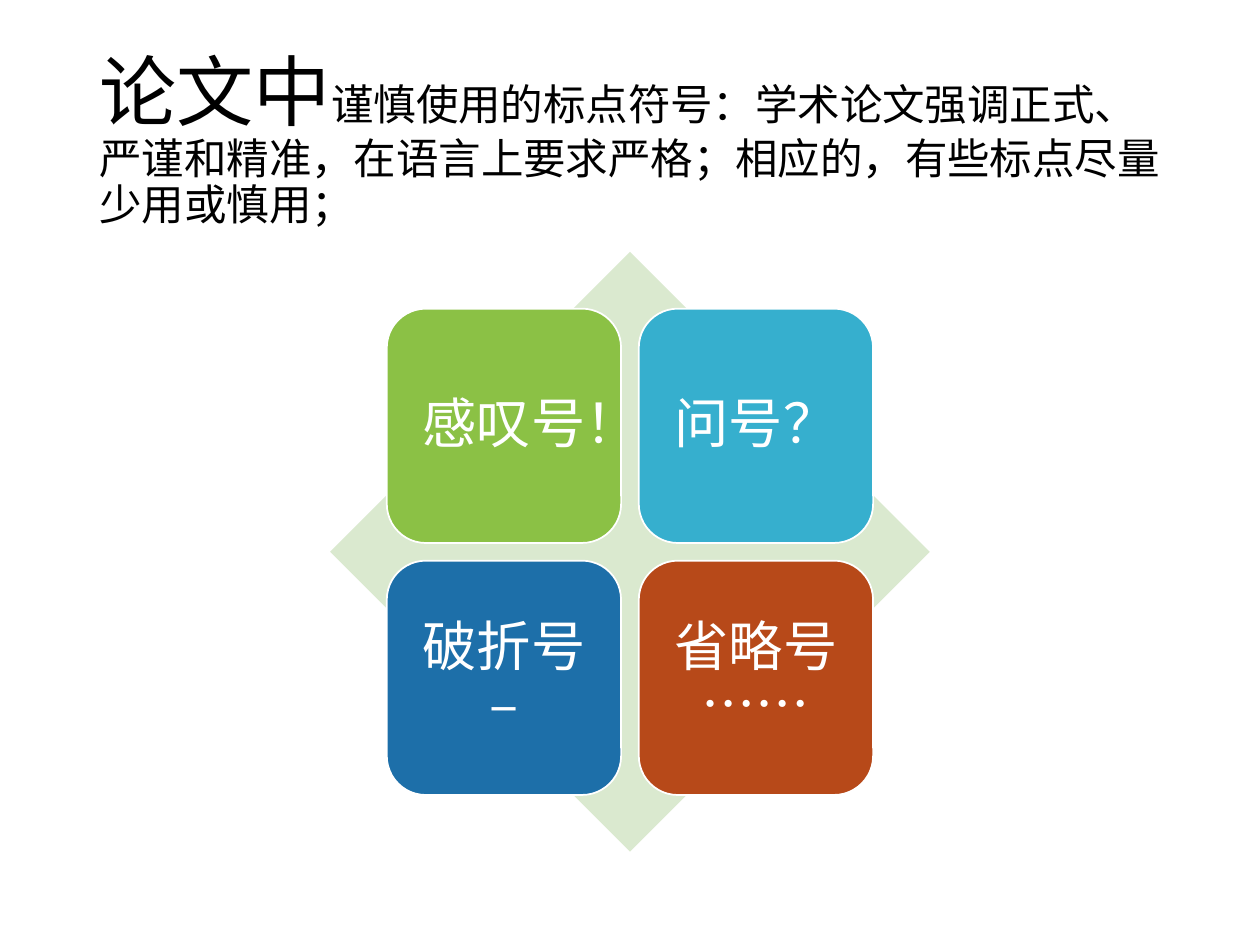
from dataclasses import dataclass
from pptx import Presentation
from pptx.dml.color import RGBColor
from pptx.enum.shapes import MSO_SHAPE
from pptx.enum.text import MSO_ANCHOR, MSO_AUTO_SIZE, PP_ALIGN
from pptx.util import Inches, Pt


@dataclass(frozen=True)
class Theme:
    font: str = "Times New Roman"
    ink: str = "000000"
    paper: str = "FFFFFF"
    pale: str = "DAE9CF"
    tiles: tuple = ("8BC145", "36AFCE", "1D6FA9", "B74919")
    head: float = 44.1
    body: float = 24.3
    label: float = 31


def write(frame, *runs, color, font, align=PP_ALIGN.LEFT, inset=None, after=0):
    frame.word_wrap = True
    frame.auto_size = MSO_AUTO_SIZE.NONE
    frame.vertical_anchor = MSO_ANCHOR.MIDDLE
    if inset is not None:
        frame.margin_left = frame.margin_right = Inches(inset)
        frame.margin_top = frame.margin_bottom = Inches(inset)
    para = frame.paragraphs[0]
    para.alignment = align
    para.line_spacing = 0.9
    para.space_after = Pt(after)
    for text, size in runs:
        run = para.add_run()
        run.text = text
        run.font.name = font
        run.font.size = Pt(size)
        run.font.color.rgb = RGBColor.from_string(color)


class Deck:
    def __init__(self, theme):
        self.theme = theme
        self.show = Presentation()
        self.show.slide_width, self.show.slide_height = Inches(10), Inches(7.5)
        self.slide = self.show.slides.add_slide(self.show.slide_layouts[5])
        self.group = self.slide.shapes.add_group_shape()

    def title(self, box, *runs):
        shape = self.slide.shapes.title
        shape.left, shape.top, shape.width, shape.height = map(Inches, box)
        write(shape.text_frame, *runs, color=self.theme.ink, font=self.theme.font)

    def shape(self, kind, left, top, side, fill):
        shape = self.group.shapes.add_shape(
            kind, Inches(left), Inches(top), Inches(side), Inches(side))
        shape.shadow.inherit = False
        shape.fill.solid()
        shape.fill.fore_color.rgb = RGBColor.from_string(fill)
        shape.line.fill.background()
        return shape

    def tile(self, left, top, side, fill, text):
        theme = self.theme
        shape = self.shape(MSO_SHAPE.ROUNDED_RECTANGLE, left, top, side, fill)
        shape.line.color.rgb = RGBColor.from_string(theme.paper)
        shape.line.width = Pt(1)
        write(shape.text_frame, (text, theme.label), color=theme.paper,
              font=theme.font, align=PP_ALIGN.CENTER, inset=0.13, after=11)


def main():
    theme = Theme()
    deck = Deck(theme)
    deck.title(
        (0.69, 0.4, 8.62, 1.45),
        ("论文中", theme.head),
        ("谨慎使用的标点符号：学术论文强调正式、严谨和精准，在语言上要求严格；"
         "相应的，有些标点尽量少用或慎用；", theme.body))
    deck.shape(MSO_SHAPE.DIAMOND, 2.62, 2, 4.76, theme.pale)
    marks = ("感叹号！", "问号？", "破折号 –", "省略号 ……")
    for i, (mark, fill) in enumerate(zip(marks, theme.tiles)):
        row, col = divmod(i, 2)
        deck.tile(3.07 + 2 * col, 2.45 + 2 * row, 1.86, fill, mark)
    deck.show.save("out.pptx")


if __name__ == "__main__":
    main()
